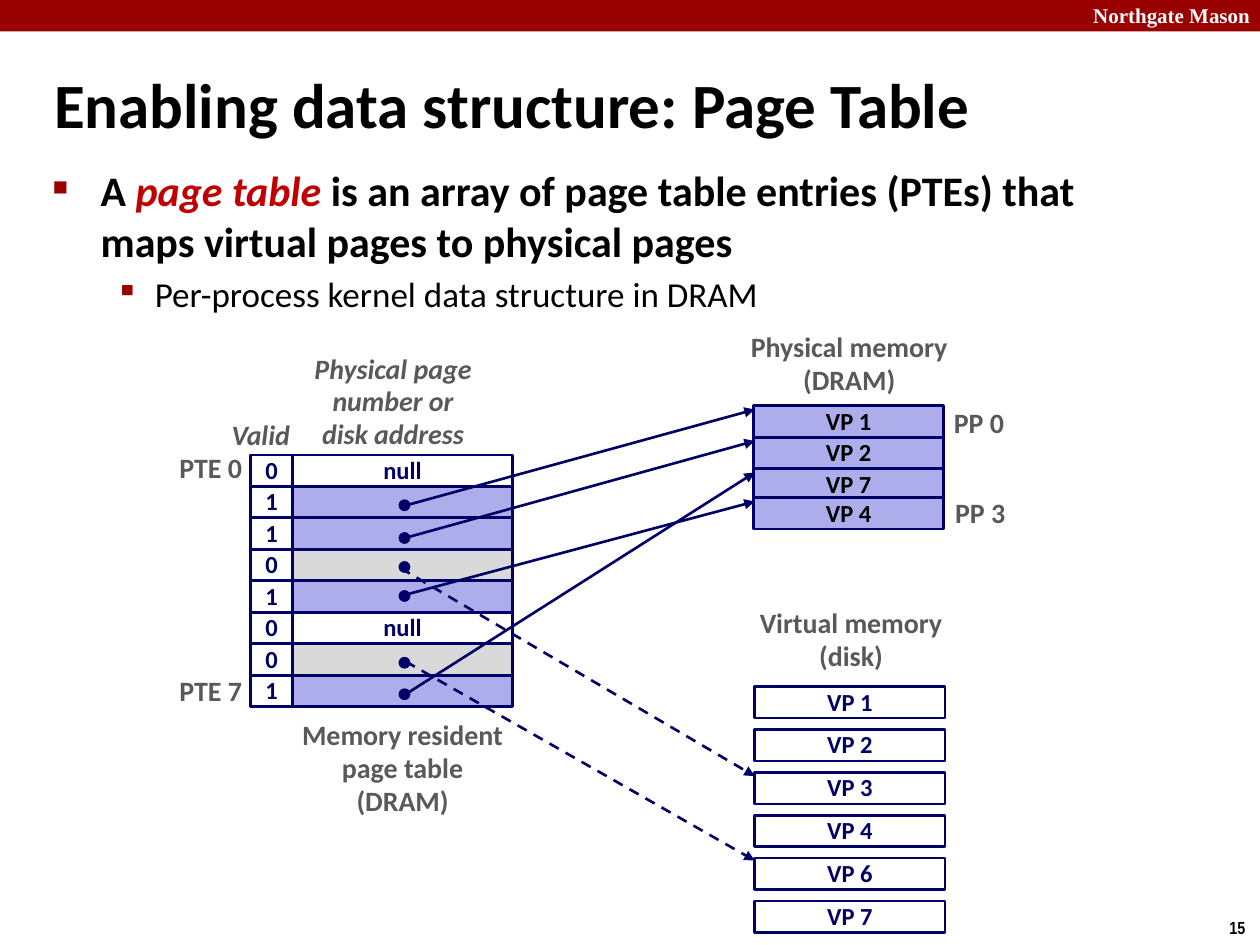
from dataclasses import dataclass

from lxml import etree
from pptx import Presentation
from pptx import util as u
from pptx.dml.color import RGBColor
from pptx.enum import dml, shapes, text
from pptx.oxml import ns

COLORS = {
    "black": "000000", "white": "FFFFFF", "red": "990000", "emphasis": "C00000",
    "navy": "000066", "lilac": "ADADEB", "gray": "D9D9D9", "label": "595959",
}
LEFT, CENTER, RIGHT = text.PP_ALIGN.LEFT, text.PP_ALIGN.CENTER, text.PP_ALIGN.RIGHT
ROW_HEIGHT = 0.25
TABLE_TOP = 3.61
MEMORY_WIDTH = 1.51
MEMORY_LEFT, DISK_LEFT = 5.98, 5.99
DISK_TOP, DISK_STEP = 5.45, 0.34
DOT_LEFT, DOT_SIZE = 3.17, 0.08


@dataclass(frozen=True)
class Style:
    size: float = 16
    color: str = "label"
    bold: bool = True
    italic: bool = False
    font: str = "Calibri"


@dataclass(frozen=True)
class Label:
    lines: tuple[str, ...]
    left: float
    top: float
    width: float
    height: float
    align: text.PP_ALIGN = CENTER
    style: Style = Style()
    spacing: float = 0.98


@dataclass(frozen=True)
class Entry:
    valid: str
    fill: str
    caption: str = ""
    dot_top: float = 0


@dataclass(frozen=True)
class Arrow:
    start: tuple[float, float]
    end: tuple[float, float]
    dashed: bool = False


def rgb(name: str) -> RGBColor:
    return RGBColor.from_string(COLORS[name])


def add_span(para, words: str, style: Style) -> None:
    span = para.add_run()
    span.text = words
    font = span.font
    font.name, font.size = style.font, u.Pt(style.size)
    font.bold, font.italic = style.bold, style.italic
    font.color.rgb = rgb(style.color)


def add_label(page, label: Label) -> None:
    box = page.shapes.add_textbox(*map(u.Inches, (label.left, label.top, label.width, label.height)))
    frame = box.text_frame
    frame.word_wrap = False
    for index, line in enumerate(label.lines):
        para = frame.add_paragraph() if index else frame.paragraphs[0]
        para.alignment = label.align
        para.line_spacing = label.spacing
        add_span(para, line, label.style)


def add_block(page, left: float, top: float, width: float, height: float,
              fill: str = "", line: float = 1.5, caption: str = "", ink: str = "navy",
              kind=shapes.MSO_SHAPE.RECTANGLE) -> None:
    block = page.shapes.add_shape(kind, *map(u.Inches, (left, top, width, height)))
    block.shadow.inherit = False
    if fill:
        block.fill.solid()
        block.fill.fore_color.rgb = rgb(fill)
    else:
        block.fill.background()
    if line:
        block.line.color.rgb = rgb("navy")
        block.line.width = u.Pt(line)
    else:
        block.line.fill.background()
    if caption:
        frame = block.text_frame
        frame.word_wrap = False
        frame.vertical_anchor = text.MSO_ANCHOR.MIDDLE
        para = frame.paragraphs[0]
        para.alignment = CENTER
        para.line_spacing = 0.98
        add_span(para, caption, Style(14, ink))


def add_arrow(page, arrow: Arrow) -> None:
    connector = page.shapes.add_connector(
        shapes.MSO_CONNECTOR.STRAIGHT, *map(u.Inches, arrow.start + arrow.end))
    connector.line.color.rgb = rgb("navy")
    connector.line.width = u.Pt(1.5)
    if arrow.dashed:
        connector.line.dash_style = dml.MSO_LINE.DASH
    outline = connector._element.spPr.find(ns.qn("a:ln"))
    etree.SubElement(outline, ns.qn("a:tailEnd"), type="triangle")
    etree.SubElement(connector._element.spPr, ns.qn("a:effectLst"))


def add_bullet(para, mark: str, percent: int, margin: float, hanging: float, before: float) -> None:
    para.space_before = u.Pt(before)
    props = para._p.get_or_add_pPr()
    props.set("marL", str(u.Inches(margin)))
    props.set("indent", str(-u.Inches(hanging)))
    color = etree.SubElement(props, ns.qn("a:buClr"))
    etree.SubElement(color, ns.qn("a:srgbClr"), val=COLORS["red"])
    etree.SubElement(props, ns.qn("a:buSzPct"), val=str(percent * 1000))
    etree.SubElement(props, ns.qn("a:buChar"), char=mark)


def add_heading(page) -> None:
    add_block(page, 0, 0, 10, 0.25, "red", line=0)
    add_label(page, Label(("Northgate Mason",), 8, -0.03, 2.02, 0.3, RIGHT,
                          Style(12, "white", font="Times New Roman"), 1))
    add_label(page, Label(("15",), 9.66, 7.23, 0.34, 0.27, LEFT,
                          Style(10, "black", font="Arial Narrow"), 1))
    title = page.shapes.title
    title.left, title.top, title.width, title.height = map(u.Inches, (0.33, 0.39, 9.06, 0.86))
    title.text_frame.vertical_anchor = text.MSO_ANCHOR.MIDDLE
    para = title.text_frame.paragraphs[0]
    para.alignment = LEFT
    add_span(para, "Enabling data structure: Page Table", Style(36, "black"))


def add_body(page) -> None:
    box = page.shapes.add_textbox(*map(u.Inches, (0.32, 1.26, 9.09, 1.41)))
    frame = box.text_frame
    frame.word_wrap = True
    para = frame.paragraphs[0]
    add_bullet(para, "■", 50, 0.38, 0.38, 4.8)
    add_span(para, "A ", Style(24, "black"))
    add_span(para, "page table ", Style(24, "emphasis", italic=True))
    add_span(para, "is an array of page table entries (PTEs) that maps virtual pages to physical pages",
             Style(24, "black"))
    para = frame.add_paragraph()
    para.level = 1
    add_bullet(para, "▪", 90, 0.81, 0.31, 4)
    add_span(para, "Per-process kernel data structure in DRAM", Style(20, "black", False))


ENTRIES = (
    Entry("0", "white", "null"),
    Entry("1", "lilac", dot_top=3.97),
    Entry("1", "lilac", dot_top=4.23),
    Entry("0", "gray", dot_top=4.46),
    Entry("1", "lilac", dot_top=4.69),
    Entry("0", "white", "null"),
    Entry("0", "gray", dot_top=5.22),
    Entry("1", "lilac", dot_top=5.47),
)
PHYSICAL_PAGES = (("VP 1", 3.22), ("VP 2", 3.47), ("VP 7", 3.72), ("VP 4", 3.95))
DISK_PAGES = ("VP 1", "VP 2", "VP 3", "VP 4", "VP 6", "VP 7")
ARROWS = (
    Arrow((3.19, 4.02), (5.99, 3.25)),
    Arrow((3.25, 4.26), (5.99, 3.5)),
    Arrow((3.18, 4.51), (5.99, 6.16), True),
    Arrow((3.22, 4.72), (5.99, 3.98)),
    Arrow((3.22, 5.25), (5.99, 6.83), True),
    Arrow((3.22, 5.51), (5.99, 3.75)),
)
SLANTED = Style(italic=True)
LABELS = (
    Label(("Valid",), 1.74, 3.28, 0.75, 0.37, LEFT, SLANTED),
    Label(("Physical page", "number or", "disk address"), 2.39, 2.75, 1.46, 0.89, style=SLANTED),
    Label(("Memory resident", "page table", "(DRAM)"), 2.27, 5.66, 1.85, 0.89),
    Label(("Physical memory", "(DRAM)"), 5.85, 2.58, 1.78, 0.63),
    Label(("Virtual memory", "(disk)"), 5.91, 4.77, 1.69, 0.63),
    Label(("PTE 0",), 1.32, 3.54, 0.7, 0.37, RIGHT),
    Label(("PTE 7",), 1.32, 5.31, 0.7, 0.37, RIGHT),
    Label(("PP 0",), 7.47, 3.18, 0.6, 0.37),
    Label(("PP 3",), 7.48, 3.9, 0.6, 0.37),
)


def main() -> None:
    deck = Presentation()
    deck.slide_width, deck.slide_height = u.Inches(10), u.Inches(7.5)
    page = deck.slides.add_slide(deck.slide_layouts[5])
    add_heading(page)
    add_body(page)
    for row, entry in enumerate(ENTRIES):
        top = TABLE_TOP + row * ROW_HEIGHT
        add_block(page, 2.32, top, 1.75, ROW_HEIGHT, entry.fill, caption=entry.caption)
        add_block(page, 1.99, top, 0.33, ROW_HEIGHT, caption=entry.valid)
    for name, top in PHYSICAL_PAGES:
        add_block(page, MEMORY_LEFT, top, MEMORY_WIDTH, ROW_HEIGHT, "lilac", caption=name, ink="black")
    for row, name in enumerate(DISK_PAGES):
        add_block(page, DISK_LEFT, DISK_TOP + row * DISK_STEP, MEMORY_WIDTH, ROW_HEIGHT, "white", caption=name)
    for arrow in ARROWS:
        add_arrow(page, arrow)
    for entry in ENTRIES:
        if entry.dot_top:
            add_block(page, DOT_LEFT, entry.dot_top, DOT_SIZE, DOT_SIZE, "navy", 1,
                      kind=shapes.MSO_SHAPE.OVAL)
    for label in LABELS:
        add_label(page, label)
    deck.save("out.pptx")


if __name__ == "__main__":
    main()
